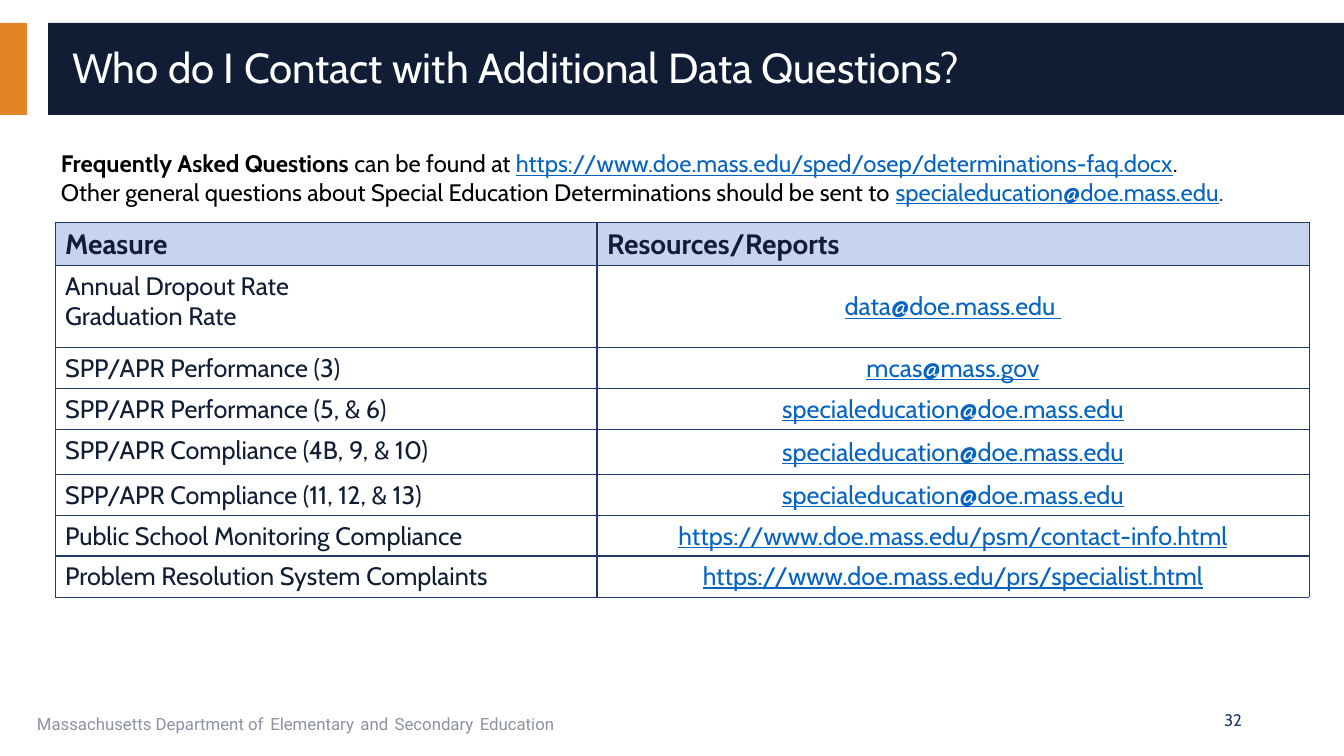
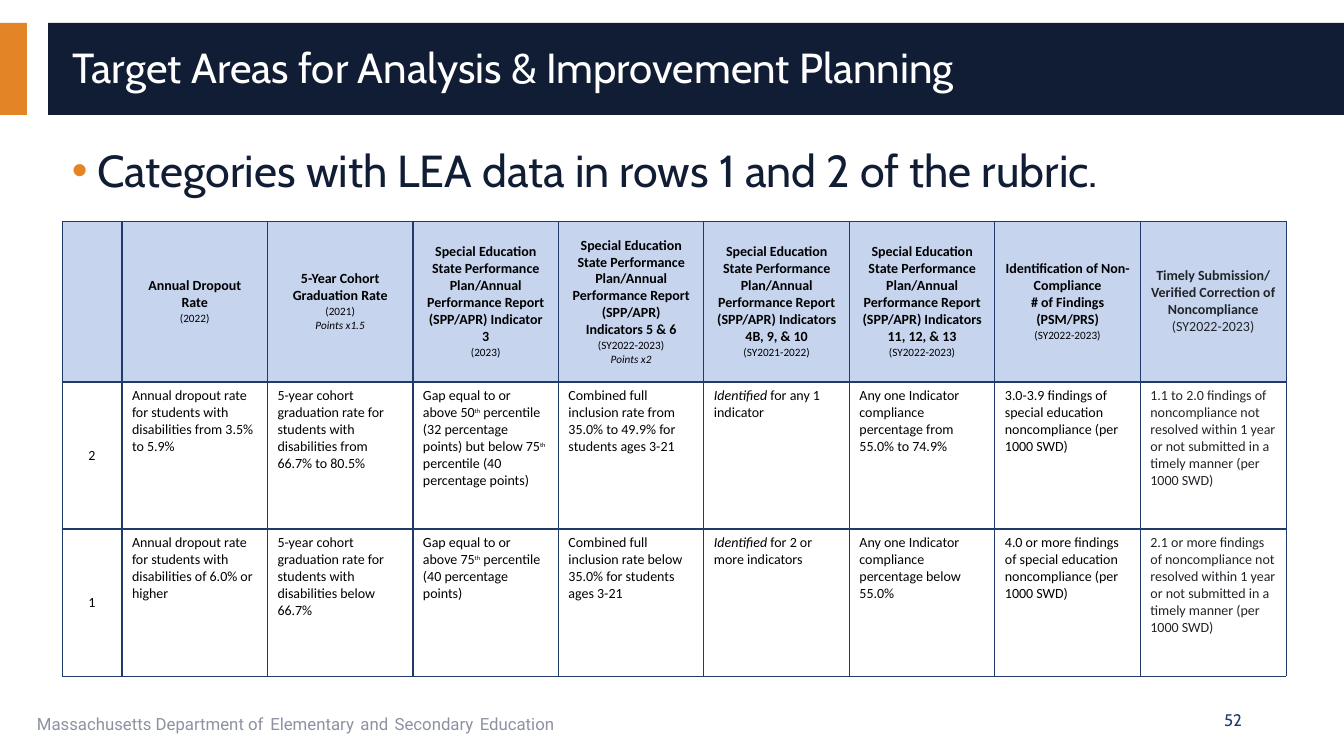
"""Build two slides on special education data contacts and target areas."""
from lxml import etree
from pptx import Presentation
from pptx.dml.color import RGBColor
from pptx.enum.shapes import MSO_SHAPE
from pptx.enum.text import MSO_ANCHOR, PP_ALIGN
from pptx.oxml import parse_xml
from pptx.oxml.ns import nsdecls, qn
from pptx.util import Pt

RECT = MSO_SHAPE.RECTANGLE
TOP, MIDDLE = MSO_ANCHOR.TOP, MSO_ANCHOR.MIDDLE
LEFT, CENTER, RIGHT = PP_ALIGN.LEFT, PP_ALIGN.CENTER, PP_ALIGN.RIGHT
PX = 914400 / 100.8


class Theme:
    orange, navy, blue = "E38526", "101D35", "203B6A"
    pale, link, gray = "C6D4EE", "0563C1", "8D92A1"
    white, black, charcoal = "FFFFFF", "000000", "212529"
    font, footer_font, rubric_font = "Cabin", "Roboto", "Calibri"
    title, lead, intro, head, body = 30, 32, 17, 20, 18
    footer, rubric, note = 12, 10, 8


def put(p, text, size=Theme.body, color=Theme.navy, font=Theme.font,
        bold=False, italic=False, underline=False, raised=False):
    for i, line in enumerate(text.split("\n")):
        if i:
            p.add_line_break()
        r = p.add_run()
        r.text = line
        f = r.font
        f.name, f.size = font, Pt(size)
        f.bold, f.italic, f.underline = bold, italic, underline
        f.color.rgb = RGBColor.from_string(color)
        if raised:
            r._r.get_or_add_rPr().set("baseline", "30000")


def add_grid(s, x, y, widths, heights):
    frame = s.shapes.add_table(len(heights), len(widths), round(x * PX), round(y * PX),
                               round(sum(widths) * PX), round(sum(heights) * PX))
    tbl = frame.table
    tbl.horz_banding = False
    for col, w in zip(tbl.columns, widths):
        col.width = round(w * PX)
    for row, h in zip(tbl.rows, heights):
        row.height = round(h * PX)
    last_row, last_col = len(heights) - 1, len(widths) - 1
    for i, row in enumerate(tbl.rows):
        for j, cell in enumerate(row.cells):
            tcPr = cell._tc.get_or_add_tcPr()
            for side, outer in (("L", j == 0), ("R", j == last_col),
                                ("T", i == 0), ("B", i == last_row)):
                tcPr.append(parse_xml(
                    f'<a:ln{side} {nsdecls("a")} w="{6350 if outer else 12700}">'
                    f'<a:solidFill><a:srgbClr val="{Theme.blue}"/></a:solidFill></a:ln{side}>'))
            if i == 0:
                cell.fill.solid()
                cell.fill.fore_color.rgb = RGBColor.from_string(Theme.pale)
            else:
                cell.fill.background()
    return tbl


prs = Presentation()
prs.slide_width, prs.slide_height = round(1344 * PX), round(756 * PX)

bands = [(0, 27, Theme.orange), (48, 1296, Theme.navy)]
footer_words = ["Massachusetts Department of", "Elementary", "and", "Secondary", "Education"]
slides = []
for title, number in (("Who do I Contact with Additional Data Questions?", "32"),
                      ("Target Areas for Analysis & Improvement Planning", "52")):
    s = prs.slides.add_slide(prs.slide_layouts[5])
    slides.append(s)
    for x, w, color in bands:
        sp = s.shapes.add_shape(RECT, round(x * PX), round(23 * PX), round(w * PX), round(92 * PX))
        sp.shadow.inherit = False
        sp.fill.solid()
        sp.fill.fore_color.rgb = RGBColor.from_string(color)
        sp.line.fill.background()

    sp = s.shapes.title
    s.shapes.element.append(sp.element)
    sp.left, sp.top, sp.width, sp.height = [round(n * PX) for n in (62, 32, 1254, 75)]
    tf = sp.text_frame
    tf.vertical_anchor = MIDDLE
    p = tf.paragraphs[0]
    p.alignment, p.line_spacing = LEFT, 0.9
    put(p, title, size=Theme.title, color=Theme.white)

    sp = s.shapes.add_textbox(*[round(n * PX) for n in (27, 700, 851, 40)])
    tf = sp.text_frame
    tf.word_wrap = True
    for i, word in enumerate(footer_words):
        if i:
            put(tf.paragraphs[0], " ", font=Theme.footer_font)
        put(tf.paragraphs[0], word, size=Theme.footer, color=Theme.gray, font=Theme.footer_font)

    sp = s.shapes.add_textbox(*[round(n * PX) for n in (950, 700, 302, 40)])
    tf = sp.text_frame
    tf.word_wrap, tf.vertical_anchor = True, MIDDLE
    tf.paragraphs[0].alignment = RIGHT
    put(tf.paragraphs[0], number, size=Theme.footer, color=Theme.blue)

contacts, rubric = slides

sp = contacts.shapes.add_textbox(*[round(n * PX) for n in (51, 144, 1264, 68)])
tf = sp.text_frame
tf.word_wrap = True
plain = {"size": Theme.intro, "color": Theme.black}
linked = {"size": Theme.intro, "color": Theme.link, "underline": True}
for text, fmt in (
        ("Frequently Asked Questions ", {**plain, "bold": True}),
        ("can be found at ", plain),
        ("https://www.doe.mass.edu/sped/osep/determinations-faq.docx", linked),
        (".\nOther general questions about Special Education Determinations should be sent to ", plain),
        ("specialeducation@doe.mass.edu", linked),
        (".", {**plain, "color": Theme.blue})):
    put(tf.paragraphs[0], text, **fmt)

contact_rows = [
    ("Measure", "Resources/Reports"),
    ("Annual Dropout Rate\nGraduation Rate", "data@doe.mass.edu "),
    ("SPP/APR Performance (3)", "mcas@mass.gov"),
    ("SPP/APR Performance (5, & 6)", "specialeducation@doe.mass.edu"),
    ("SPP/APR Compliance (4B, 9, & 10)", "specialeducation@doe.mass.edu"),
    ("SPP/APR Compliance (11, 12, & 13)", "specialeducation@doe.mass.edu"),
    ("Public School Monitoring Compliance", "https://www.doe.mass.edu/psm/contact-info.html"),
    ("Problem Resolution System Complaints", "https://www.doe.mass.edu/prs/specialist.html"),
]
tbl = add_grid(contacts, 55, 222, [542, 712], [43, 82, 41, 41, 45, 41, 40, 41])
for i, row in enumerate(contact_rows):
    for j, text in enumerate(row):
        cell = tbl.cell(i, j)
        p = cell.text_frame.paragraphs[0]
        if i == 0:
            put(p, text, size=Theme.head, bold=True)
        elif j == 0:
            put(p, text)
        else:
            cell.vertical_anchor, p.alignment = MIDDLE, CENTER
            put(p, text, color=Theme.link, underline=True)

sp = rubric.shapes.add_textbox(*[round(n * PX) for n in (62, 138, 1254, 70)])
tf = sp.text_frame
tf.word_wrap = True
p = tf.paragraphs[0]
put(p, "Categories with LEA data in rows 1 and 2 of the rubric.", size=Theme.lead)
pPr = p._p.get_or_add_pPr()
pPr.set("marL", "228600")
pPr.set("indent", "-228600")
buClr = etree.SubElement(pPr, qn("a:buClr"))
etree.SubElement(buClr, qn("a:srgbClr"), val=Theme.orange)
etree.SubElement(pPr, qn("a:buFont"), typeface="Arial")
etree.SubElement(pPr, qn("a:buChar"), char="•")

NAME = {"bold": True}
NOTE = {"size": Theme.note}
POINTS = {"size": Theme.note, "italic": True}
RAISED = {"size": Theme.note, "raised": True}
ITALIC = {"italic": True}
report = "Special Education State Performance Plan/Annual Performance Report (SPP/APR)"
headings = [
    [],
    [("Annual Dropout\nRate", NAME), ("(2022)", NOTE)],
    [("5-Year Cohort Graduation Rate", NAME), ("(2021)", NOTE), ("Points x1.5", POINTS)],
    [(f"{report} Indicator\n3", NAME), ("(2023)", NOTE)],
    [(report, NAME), ("Indicators 5 & 6", NAME), ("(SY2022-2023)", NOTE), ("Points x2", POINTS)],
    [(f"{report} Indicators", NAME), ("4B, 9, & 10", NAME), ("(SY2021-2022)", NOTE)],
    [(f"{report} Indicators", NAME), ("11, 12, & 13", NAME), ("(SY2022-2023)", NOTE)],
    [("Identification of Non-Compliance", NAME), ("# of Findings (PSM/PRS)", NAME),
     ("(SY2022-2023)", NOTE)],
    [("Timely Submission/ Verified Correction of Noncompliance", NAME), ("(SY2022-2023)", {})],
]
criteria = [
    [[("2", {})],
     [("Annual dropout rate for students with disabilities from 3.5% to 5.9%", {})],
     [("5-year cohort graduation rate for students with disabilities from 66.7% to 80.5%", {})],
     [("Gap equal to or above 50", {}), ("th", RAISED),
      (" percentile (32 percentage points) but below 75", {}), ("th", RAISED),
      (" percentile (40 percentage points)", {})],
     [("Combined full inclusion rate from 35.0% to 49.9% for students ages 3-21", {})],
     [("Identified", ITALIC), (" for any 1 indicator", {})],
     [("Any one Indicator compliance percentage from 55.0% to 74.9%", {})],
     [("3.0-3.9 findings of special education noncompliance (per 1000 SWD)", {})],
     [("1.1 to 2.0 findings of noncompliance not resolved within 1 year or not submitted "
       "in a timely manner (per 1000 SWD)", {})]],
    [[("1", {})],
     [("Annual dropout rate for students with disabilities of 6.0% or higher", {})],
     [("5-year cohort graduation rate for students with disabilities below 66.7%", {})],
     [("Gap equal to or above 75", {}), ("th", RAISED), (" percentile (40 percentage points)", {})],
     [("Combined full inclusion rate below 35.0% for students ages 3-21", {})],
     [("Identified", ITALIC), (" for 2 or more indicators", {})],
     [("Any one Indicator compliance percentage below 55.0%", {})],
     [("4.0 or more findings of special education noncompliance (per 1000 SWD)", {})],
     [("2.1 or more findings of noncompliance not resolved within 1 year or not submitted "
       "in a timely manner (per 1000 SWD)", {})]],
]
tbl = add_grid(rubric, 62, 221, [60] + [(1224 - 60) / 8] * 8, [161, 147, 147])
for i, row in enumerate([headings] + criteria):
    for j, parts in enumerate(row):
        cell = tbl.cell(i, j)
        centered = i == 0 or j == 0
        cell.vertical_anchor = MIDDLE if centered else TOP
        tf = cell.text_frame
        p = tf.paragraphs[0]
        for k, (text, fmt) in enumerate(parts):
            if i == 0 and k:
                p = tf.add_paragraph()
            p.alignment = CENTER if centered else LEFT
            color = Theme.charcoal if j == 8 else Theme.black
            put(p, text, **{"size": Theme.rubric, "color": color, "font": Theme.rubric_font, **fmt})

prs.save("out.pptx")
